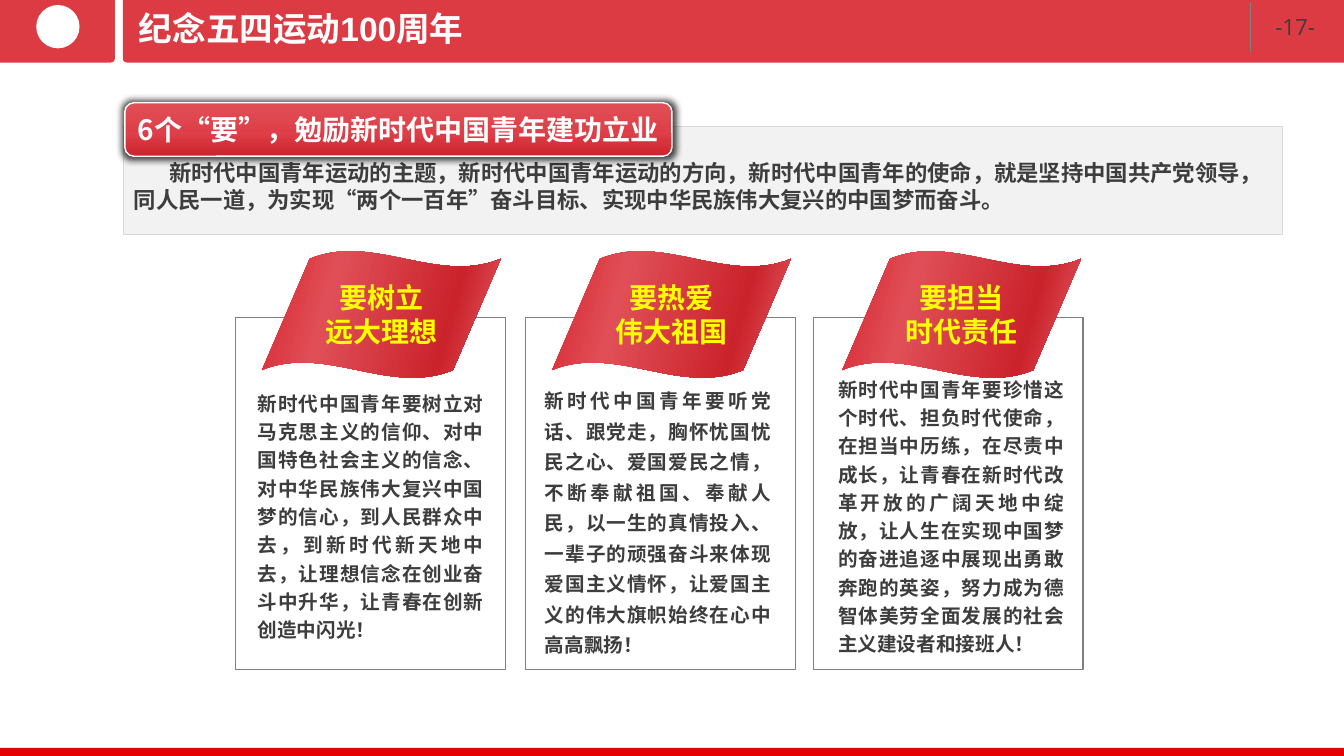
from math import cos, pi, sin

from lxml.etree import SubElement
from pptx import Presentation
from pptx.dml.color import RGBColor
from pptx.enum.shapes import MSO_CONNECTOR, MSO_SHAPE
from pptx.enum.text import MSO_ANCHOR, PP_ALIGN
from pptx.oxml import parse_xml
from pptx.oxml.ns import nsdecls, qn
from pptx.util import Inches, Pt

WIDTH, HEIGHT = 13.34, 7.5
CJK = "Noto Sans CJK SC"
RED, WHITE, GREY, DARK, YELLOW = "DD3B44", "FFFFFF", "7F7F7F", "3D3D3D", "FFFF00"
FLAG_STOPS = [(0, "D7252F"), (29, "E04F57"), (76, "CB232C"), (100, "E35D64")]
BADGE_STOPS = [(0, "E04F57"), (56, "DE3F48"), (100, "CB232C")]
colour = RGBColor.from_string


def paint(shape, fill, line=None, line_width=0.75, angle=0):
    """Fill with one colour, or with a list of gradient stops, and set the outline."""
    shape.shadow.inherit = False
    if isinstance(fill, str):
        shape.fill.solid()
        shape.fill.fore_color.rgb = colour(fill)
    else:
        stops = "".join(f'<a:gs pos="{place * 1000}"><a:srgbClr val="{value}"/></a:gs>'
                        for place, value in fill)
        gradient = parse_xml(f'<a:gradFill {nsdecls("a")} rotWithShape="1"><a:gsLst>{stops}</a:gsLst>'
                             f'<a:lin ang="{angle * 60000}" scaled="0"/></a:gradFill>')
        shape._element.spPr.find(qn("a:prstGeom")).addnext(gradient)
    if line:
        shape.line.color.rgb = colour(line)
        shape.line.width = Pt(line_width)
    else:
        shape.line.fill.background()


def write(shape, lines, size, hue, align=PP_ALIGN.LEFT, anchor=MSO_ANCHOR.TOP,
          pitch=None, font=CJK, bold=True, inset=None, wrap=True):
    """Put one paragraph per line into a shape; pitch is the line height in points."""
    frame = shape.text_frame
    frame.text = "\n".join(lines)
    frame.word_wrap = wrap
    frame.vertical_anchor = anchor
    if inset is not None:
        frame.margin_left = frame.margin_right = Inches(inset)
        frame.margin_top = frame.margin_bottom = Inches(inset)
    for para in frame.paragraphs:
        para.alignment = align
        para._p.get_or_add_pPr().set("hangingPunct", "0")
        if pitch:
            para.line_spacing = Pt(pitch)
        for span in para.runs:
            span.font.size = Pt(size)
            span.font.bold = bold
            span.font.name = font
            span.font.color.rgb = colour(hue)
            SubElement(span.font._element, qn("a:ea")).set("typeface", CJK)


deck = Presentation()
deck.slide_width, deck.slide_height = Inches(WIDTH), Inches(HEIGHT)
page = deck.slides.add_slide(deck.slide_layouts[6])
shapes = page.shapes

# Header bands, each with one rounded lower corner facing the gap
BAND, RADIUS = 0.62, 0.04
for outer, inner, side in [(0, 1.14, 1), (WIDTH, 1.22, -1)]:
    corner = [(inner - side * RADIUS * (1 - cos(step * pi / 12)),
               BAND - RADIUS * (1 - sin(step * pi / 12))) for step in range(7)]
    outline = shapes.build_freeform(Inches(outer), 0, scale=1)
    outline.add_line_segments([(Inches(x), Inches(y)) for x, y in
                               [(inner, 0), *corner, (outer, BAND)]])
    paint(outline.convert_to_shape(), RED)

# Header contents and footer strip
emblem = shapes.add_shape(MSO_SHAPE.OVAL, Inches(0.36), Inches(0.05), Inches(0.43), Inches(0.43))
paint(emblem, WHITE)
footer = shapes.add_shape(MSO_SHAPE.RECTANGLE, 0, Inches(HEIGHT - 0.08), Inches(WIDTH), Inches(0.08))
paint(footer, "E60000")
divider = shapes.add_connector(MSO_CONNECTOR.STRAIGHT, Inches(12.41), Inches(0.02),
                               Inches(12.41), Inches(0.52))
divider.line.color.rgb = colour(GREY)
divider.line.width = Pt(0.75)
SubElement(divider._element.spPr, qn("a:effectLst"))
number = shapes.add_textbox(Inches(12.56), Inches(0.08), Inches(0.64), Inches(0.37))
write(number, ["-17-"], 16, DARK, font="Open Sans", bold=False, wrap=False)
title = shapes.add_textbox(Inches(1.28), 0, Inches(9.02), Inches(0.55))
write(title, ["纪念五四运动100周年"], 24, WHITE, anchor=MSO_ANCHOR.MIDDLE, font="Arial")

# Three panels: flag heading, panel left, text left, text top, line pitch, text
columns = [
    (["要树立", "远大理想"], 2.34, 2.46, 3.79, 20.2,
     "新时代中国青年要树立对马克思主义的信仰、对中国特色社会主义的信念、对中华民族伟大复兴中国梦的信心，"
     "到人民群众中去，到新时代新天地中去，让理想信念在创业奋斗中升华，让青春在创新创造中闪光！"),
    (["要热爱", "伟大祖国"], 5.22, 5.31, 3.74, 21.8,
     "新时代中国青年要听党话、跟党走，胸怀忧国忧民之心、爱国爱民之情，不断奉献祖国、奉献人民，"
     "以一生的真情投入、一辈子的顽强奋斗来体现爱国主义情怀，让爱国主义的伟大旗帜始终在心中高高飘扬！"),
    (["要担当", "时代责任"], 8.07, 8.22, 3.65, 20.2,
     "新时代中国青年要珍惜这个时代、担负时代使命，在担当中历练，在尽责中成长，"
     "让青春在新时代改革开放的广阔天地中绽放，让人生在实现中国梦的奋进追逐中展现出勇敢奔跑的英姿，"
     "努力成为德智体美劳全面发展的社会主义建设者和接班人！"),
]
for index, (heading, panel_left, text_left, text_top, pitch, body) in enumerate(columns):
    panel = shapes.add_shape(MSO_SHAPE.RECTANGLE, Inches(panel_left), Inches(3.15),
                             Inches(2.68), Inches(3.49))
    paint(panel, WHITE, GREY)
    flag = shapes.add_shape(MSO_SHAPE.WAVE, Inches(2.6 + 2.88 * index), Inches(2.49),
                            Inches(2.37), Inches(1.26))
    flag.adjustments[0], flag.adjustments[1] = 0.062, -0.1
    paint(flag, FLAG_STOPS, angle=15)
    write(flag, heading, 20, YELLOW, PP_ALIGN.CENTER, MSO_ANCHOR.MIDDLE, pitch=24.3, inset=0)
    box = shapes.add_textbox(Inches(text_left), Inches(text_top), Inches(2.44), Inches(2.8))
    write(box, [body], 14, DARK, PP_ALIGN.JUSTIFY, pitch=pitch)

# Introduction
intro = shapes.add_shape(MSO_SHAPE.RECTANGLE, Inches(1.23), Inches(1.26), Inches(11.5), Inches(1.07))
paint(intro, "F2F2F2", "D9D9D9")
write(intro, ["新时代中国青年运动的主题，新时代中国青年运动的方向，新时代中国青年的使命，就是坚持中国共产党领导，"
              "同人民一道，为实现“两个一百年”奋斗目标、实现中华民族伟大复兴的中国梦而奋斗。"],
      16, DARK, pitch=19.2)
intro.text_frame.margin_top = Inches(0.32)
intro.text_frame.paragraphs[0]._p.get_or_add_pPr().set("indent", str(Inches(0.35)))

# Section badge with a soft glow of shadow
badge = shapes.add_shape(MSO_SHAPE.ROUNDED_RECTANGLE, Inches(1.24), Inches(1.02),
                         Inches(5.43), Inches(0.53))
paint(badge, BADGE_STOPS, WHITE, 1, angle=90)
write(badge, ["6个“要”，勉励新时代中国青年建功立业"], 20, WHITE,
      PP_ALIGN.CENTER, MSO_ANCHOR.MIDDLE, inset=0)
badge._element.spPr.find(qn("a:effectLst")).append(parse_xml(
    f'<a:outerShdw {nsdecls("a")} blurRad="{Pt(5)}" dist="0" dir="0" sx="101000" sy="108000" '
    'algn="ctr" rotWithShape="0">'
    '<a:srgbClr val="000000"><a:alpha val="75000"/></a:srgbClr></a:outerShdw>'))

deck.save("out.pptx")
